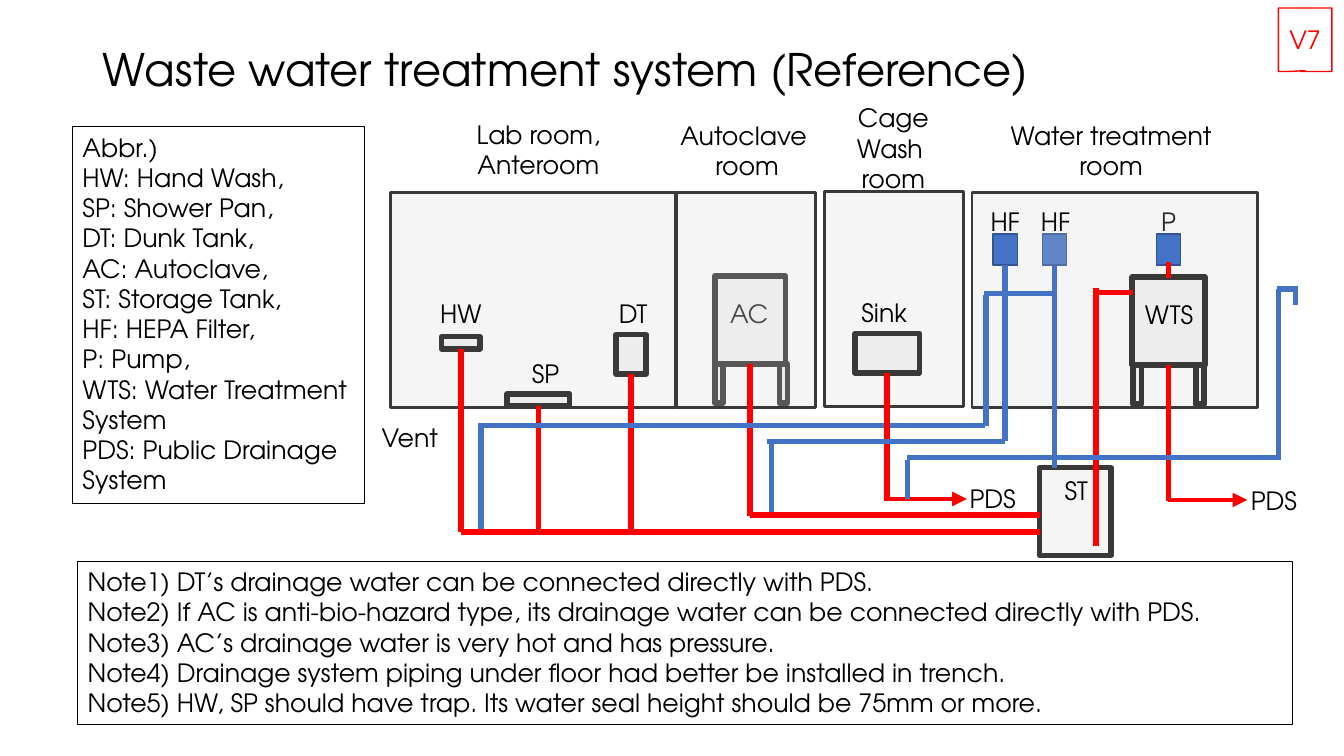
from lxml.etree import SubElement
from pptx import Presentation
from pptx.dml.color import RGBColor
from pptx.enum.shapes import MSO_CONNECTOR, MSO_SHAPE
from pptx.enum.text import MSO_ANCHOR, MSO_AUTO_SIZE, PP_ALIGN
from pptx.oxml.ns import qn
from pptx.util import Inches, Pt

FONT = "TeX Gyre Adventor"
COLORS = {
    "text": "000000",
    "wall": "3B3838",
    "tint": "D0CECE",
    "vent": "4472C4",
    "filter edge": "325491",
    "drain": "FF0000",
}

presentation = Presentation()
presentation.slide_width = Inches(13.33)
presentation.slide_height = Inches(7.5)
slide = presentation.slides.add_slide(presentation.slide_layouts[5])
boxes = {}


def add_box(area, line, weight, fill=None, alpha=None, preset=MSO_SHAPE.RECTANGLE):
    shape = slide.shapes.add_shape(preset, *[Inches(value) for value in area])
    shape.shadow.inherit = False
    shape.line.color.rgb = RGBColor.from_string(COLORS[line])
    shape.line.width = Pt(weight)
    if fill is None:
        shape.fill.background()
    else:
        shape.fill.solid()
        shape.fill.fore_color.rgb = RGBColor.from_string(COLORS[fill])
    if alpha is not None:
        color = shape.fill._xPr.find(qn("a:solidFill"))[0]
        SubElement(color, qn("a:alpha")).set("val", str(alpha * 1000))
    return shape


def write(shape, lines, align=PP_ALIGN.CENTER, color="text", size=18):
    frame = shape.text_frame
    frame.text = "\n".join(lines)
    frame.word_wrap = True
    for paragraph in frame.paragraphs:
        paragraph.alignment = align
        paragraph.font.name = FONT
        paragraph.font.size = Pt(size)
        paragraph.font.color.rgb = RGBColor.from_string(COLORS[color])
    return frame


# Title
title = slide.shapes.title
title.left, title.top = Inches(0.92), Inches(0.4)
title.width, title.height = Inches(11.5), Inches(0.63)
title_frame = write(title, ["Waste water treatment system (Reference)"], PP_ALIGN.LEFT, size=32)
title_frame.auto_size = MSO_AUTO_SIZE.NONE
title_frame.vertical_anchor = MSO_ANCHOR.MIDDLE
title_frame.paragraphs[0].line_spacing = 0.9

# Abbreviations and notes
panels = [
    ((0.72, 1.26, 2.9, 3.74), [
        "Abbr.)", "HW: Hand Wash,", "SP: Shower Pan,", "DT: Dunk Tank,",
        "AC: Autoclave,", "ST: Storage Tank,", "HF: HEPA Filter,", "P: Pump,",
        "WTS: Water Treatment System", "PDS: Public Drainage System"]),
    ((0.77, 5.57, 12.05, 1.62), [
        "Note1) DT’s drainage water can be connected directly with PDS.",
        "Note2) If AC is anti-bio-hazard type, its drainage water can be connected directly with PDS.",
        "Note3) AC’s drainage water is very hot and has pressure.",
        "Note4) Drainage system piping under floor had better be installed in trench.",
        "Note5) HW, SP should have trap. Its water seal height should be 75mm or more."]),
]
for area, lines in panels:
    frame = write(add_box(area, "text", 0.75), lines, PP_ALIGN.LEFT)
    frame.vertical_anchor = MSO_ANCHOR.TOP
    frame.auto_size = MSO_AUTO_SIZE.SHAPE_TO_FIT_TEXT

# Version mark
mark = add_box((12.68, 0.08, 0.53, 0.63), "drain", 1, preset=MSO_SHAPE.RECTANGULAR_CALLOUT)
mark.adjustments[0], mark.adjustments[1] = -0.002, 0.487
write(mark, ["V7"], color="drain").vertical_anchor = MSO_ANCHOR.MIDDLE

# Labels: left, top, width, height, lines; the first two lie behind the rooms
labels = [
    (7.12, 2.91, 0.62, 0.4, ["AC"]),
    (11.3, 2, 0.58, 0.4, ["P"]),
    (6.6, 1.14, 1.62, 0.71, ["Autoclave ", "room"]),
    (4.12, 1.13, 2.44, 0.71, ["Lab room, Anteroom"]),
    (9.8, 1.14, 2.44, 0.71, ["Water treatment room"]),
    (8.05, 0.97, 1.62, 1.01, ["Cage Wash ", "room"]),
    (4.26, 2.91, 0.62, 0.4, ["HW"]),
    (5.1, 3.51, 0.62, 0.4, ["SP"]),
    (5.97, 2.91, 0.62, 0.4, ["DT"]),
    (8.31, 2.9, 0.92, 0.4, ["Sink"]),
    (11.23, 2.92, 0.73, 0.4, ["WTS"]),
    (10.31, 4.67, 0.73, 0.4, ["ST"]),
    (9.66, 2, 0.62, 0.4, ["HF"]),
    (10.16, 2, 0.62, 0.4, ["HF"]),
    (9.1, 4.75, 1.49, 0.4, ["PDS"]),
    (11.89, 4.77, 1.49, 0.4, ["PDS"]),
    (3.51, 4.14, 1.11, 0.4, ["Vent"]),
]
label_boxes = []
for *area, lines in labels:
    label = slide.shapes.add_textbox(*[Inches(value) for value in area])
    write(label, lines).auto_size = MSO_AUTO_SIZE.SHAPE_TO_FIT_TEXT
    label_boxes.append(label)

# Rooms and equipment, from back to front: name, area, line weight
tinted = [
    ("lab room", (3.87, 1.91, 2.83, 2.13), 2),
    ("AC", (7.09, 2.74, 0.7, 0.87), 4),
    ("AC left leg", (7.09, 3.61, 0.08, 0.39), 4),
    ("AC right leg", (7.73, 3.61, 0.08, 0.39), 4),
    ("autoclave room", (6.71, 1.91, 1.38, 2.13), 2),
    ("cage wash room", (8.18, 1.9, 1.38, 2.13), 2),
    ("water treatment room", (9.64, 1.91, 2.83, 2.13), 2),
    ("HW", (4.38, 3.34, 0.38, 0.12), 4),
    ("SP", (5.03, 3.91, 0.62, 0.12), 4),
    ("DT", (6.11, 3.32, 0.3, 0.39), 4),
    ("Sink", (8.48, 3.31, 0.64, 0.39), 4),
    ("WTS", (11.23, 2.75, 0.72, 0.87), 4),
    ("WTS left leg", (11.24, 3.62, 0.08, 0.39), 4),
    ("WTS right leg", (11.86, 3.62, 0.08, 0.39), 4),
    ("ST", (10.31, 4.64, 0.71, 0.87), 4),
]
# Filters and pump
filters = [("right HF", 10.34), ("left HF", 9.85), ("P", 11.47)]
for name, left in filters:
    boxes[name] = add_box((left, 2.32, 0.24, 0.31), "filter edge", 1, "vent")
for name, area, weight in tinted:
    boxes[name] = add_box(area, "wall", weight, "tint", 20)

# Bring the front labels and filters above the rooms
for shape in [boxes["left HF"], boxes["P"]] + label_boxes[2:]:
    slide.shapes._spTree.append(shape._element)

# Pipes: kind, from, to, weight, box drained at its bottom, arrowhead
pipes = [
    ("vent", (4.77, 4.2), (4.77, 5.27), 4, None, False),
    ("drain", (7.44, 3.61), (7.44, 5.12), 4, "AC", False),
    ("drain", (4.57, 3.46), (4.57, 5.28), 4, "HW", False),
    ("drain", (5.34, 4.03), (5.34, 5.25), 4, "SP", False),
    ("drain", (6.26, 3.71), (6.26, 5.25), 4, "DT", False),
    ("drain", (4.57, 5.28), (10.32, 5.28), 4, None, False),
    ("drain", (7.44, 5.11), (10.32, 5.11), 4, None, False),
    ("vent", (4.77, 4.22), (9.77, 4.22), 4, None, False),
    ("drain", (11.59, 3.62), (11.59, 4.97), 4, "WTS", False),
    ("drain", (10.87, 2.86), (10.87, 5.42), 4, None, False),
    ("drain", (10.89, 2.9), (11.24, 2.9), 4, None, False),
    ("vent", (10.46, 2.63), (10.46, 4.64), 4, "right HF", False),
    ("vent", (9.78, 2.93), (9.78, 4.23), 4, None, False),
    ("vent", (9.76, 2.91), (10.47, 2.91), 4, None, False),
    ("drain", (8.8, 3.7), (8.8, 4.97), 4, "Sink", False),
    ("drain", (8.81, 4.95), (9.59, 4.95), 3.5, None, True),
    ("drain", (11.58, 4.96), (12.37, 4.96), 3.5, None, True),
    ("vent", (7.65, 4.37), (7.65, 5.08), 4, None, False),
    ("vent", (9, 4.56), (9, 4.95), 4, None, False),
    ("vent", (7.61, 4.38), (9.97, 4.38), 3.5, None, False),
    ("vent", (9, 4.54), (12.71, 4.54), 3.5, None, False),
    ("drain", (11.59, 2.6), (11.59, 2.76), 4, None, False),
    ("vent", (12.68, 2.87), (12.68, 4.52), 4, None, False),
    ("vent", (12.67, 2.87), (12.86, 2.87), 4, None, False),
    ("vent", (12.85, 2.84), (12.85, 3.03), 4, None, False),
    ("vent", (9.97, 2.63), (9.97, 4.38), 4, "left HF", False),
]
for kind, start, end, weight, source, arrow in pipes:
    pipe = slide.shapes.add_connector(
        MSO_CONNECTOR.STRAIGHT, *[Inches(value) for value in start + end])
    pipe.line.color.rgb = RGBColor.from_string(COLORS[kind])
    pipe.line.width = Pt(weight)
    if source:
        pipe.begin_connect(boxes[source], 2)
    if arrow:
        SubElement(pipe.line._get_or_add_ln(), qn("a:tailEnd")).set("type", "triangle")
    SubElement(pipe._element.spPr, qn("a:effectLst"))

presentation.save("out.pptx")
